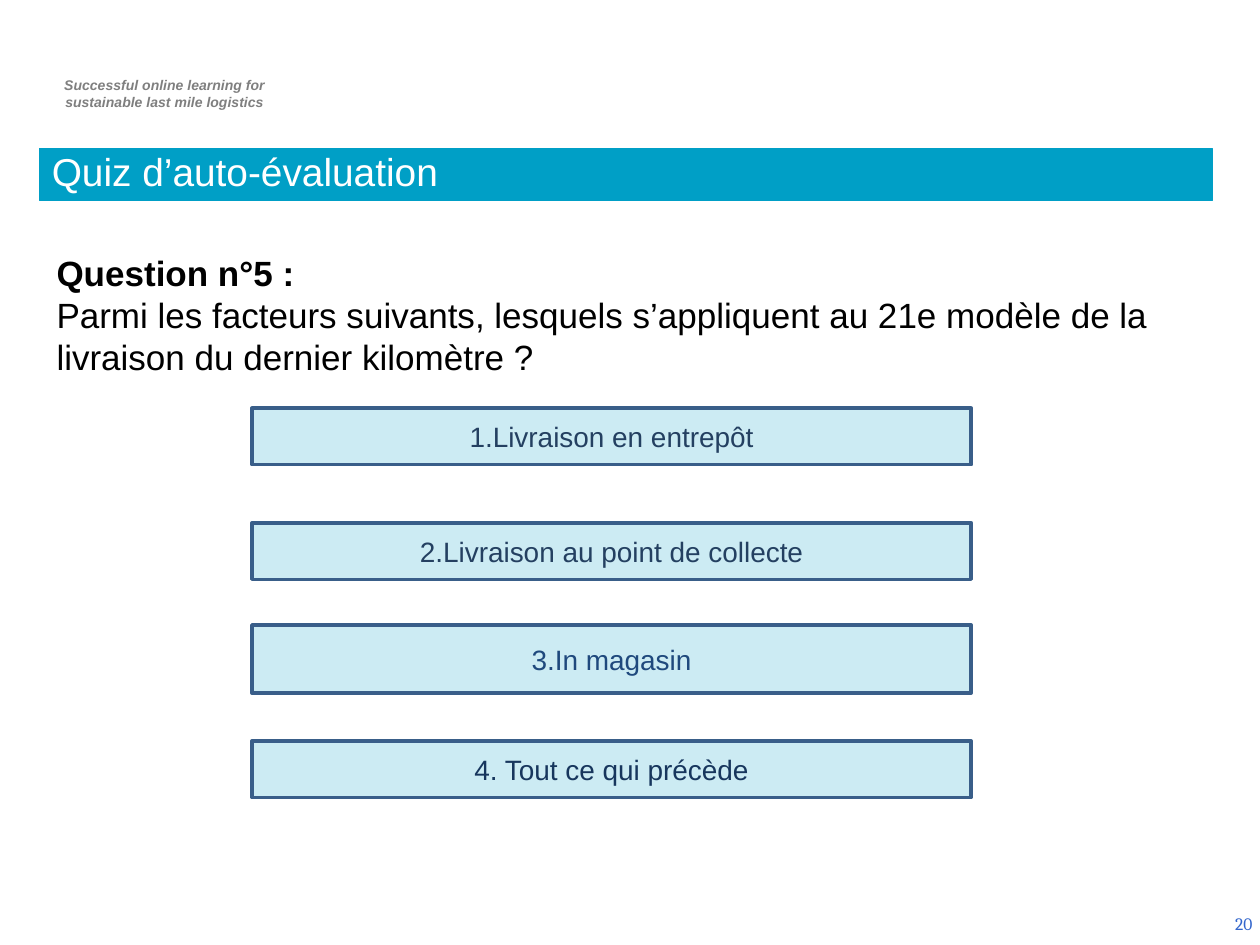
import pptx
import pptx.util
import pptx.dml.color
import pptx.enum.shapes
import pptx.enum.text
from lxml import etree
from pptx.oxml.ns import qn

Cm = pptx.util.Cm
Pt = pptx.util.Pt
ALIGN = pptx.enum.text.PP_ALIGN
ANCHOR = pptx.enum.text.MSO_ANCHOR


def rgb(value):
    return pptx.dml.color.RGBColor.from_string(value)


class QuizSlide:
    FONT = "Arial"
    ACCENT = "009FC6"
    BORDER = "395E89"

    def __init__(self, prs):
        self.s = prs.slides.add_slide(prs.slide_layouts[5])

    def add_lines(self, tf, lines, size, color, align=ALIGN.LEFT, anchor=ANCHOR.TOP,
                  font=FONT, italic=False):
        tf.word_wrap = True
        tf.auto_size = pptx.enum.text.MSO_AUTO_SIZE.NONE
        tf.vertical_anchor = anchor
        for i, (text, bold) in enumerate(lines):
            p = tf.add_paragraph() if i else tf.paragraphs[0]
            p.alignment = align
            r = p.add_run()
            r.text = text
            r.font.name = font
            r.font.size = Pt(size)
            r.font.bold = bold
            r.font.italic = italic
            r.font.color.rgb = rgb(color)

    def paint(self, sp, line, width):
        sp.fill.solid()
        sp.fill.fore_color.rgb = rgb(self.ACCENT)
        sp.line.color.rgb = rgb(line)
        sp.line.width = Pt(width)

    def title(self, text, x, y, w, h):
        sp = self.s.shapes.title
        sp.left, sp.top, sp.width, sp.height = Cm(x), Cm(y), Cm(w), Cm(h)
        self.paint(sp, self.ACCENT, 0.75)
        self.add_lines(sp.text_frame, [(text, False)], 22.2, "FFFFFF", anchor=ANCHOR.BOTTOM)
        sp.text_frame.paragraphs[0].line_spacing = 0.8

    def text(self, lines, x, y, w, h, size, color, **style):
        sp = self.s.shapes.add_textbox(Cm(x), Cm(y), Cm(w), Cm(h))
        self.add_lines(sp.text_frame, lines, size, color, **style)

    def answer(self, text, y, h, color):
        sp = self.s.shapes.add_shape(pptx.enum.shapes.MSO_SHAPE.RECTANGLE,
                                     Cm(5.08), Cm(y), Cm(14.5), Cm(h))
        sp.shadow.inherit = False
        self.paint(sp, self.BORDER, 2)
        fill = sp.element.spPr.find(qn("a:solidFill"))
        etree.SubElement(fill[0], qn("a:alpha"), val="20000")
        self.add_lines(sp.text_frame, [(text, False)], 16, color, ALIGN.CENTER, ANCHOR.MIDDLE)


def main():
    prs = pptx.Presentation()
    prs.slide_width, prs.slide_height = Cm(25.4), Cm(19.05)
    quiz = QuizSlide(prs)
    quiz.title("Quiz d’auto-évaluation", 0.79, 3, 23.65, 1.04)
    quiz.text([("Successful online learning for", True),
               ("sustainable last mile logistics", True)],
              0.74, 1.42, 5.16, 0.94, 8, "7F7F7F", align=ALIGN.CENTER, italic=True)
    quiz.text([("20", False)], 19.58, 18.11, 5.92, 1.02, 10, "3366CC",
              align=ALIGN.RIGHT, anchor=ANCHOR.MIDDLE, font="Cambria")
    quiz.text([("Question n°5 :", True),
               ("Parmi les facteurs suivants, lesquels s’appliquent au 21e modèle "
                "de la livraison du dernier kilomètre ?", False)],
              0.89, 4.95, 23.65, 3.68, 20, "000000")
    for text, y, h, color in [
        ("1.Livraison en entrepôt", 8.23, 1.14, "244061"),
        ("2.Livraison au point de collecte", 10.54, 1.14, "244061"),
        ("3.In magasin", 12.6, 1.37, "1F497D"),
        ("4. Tout ce qui précède", 14.94, 1.14, "17365D"),
    ]:
        quiz.answer(text, y, h, color)
    prs.save("out.pptx")


if __name__ == "__main__":
    main()
